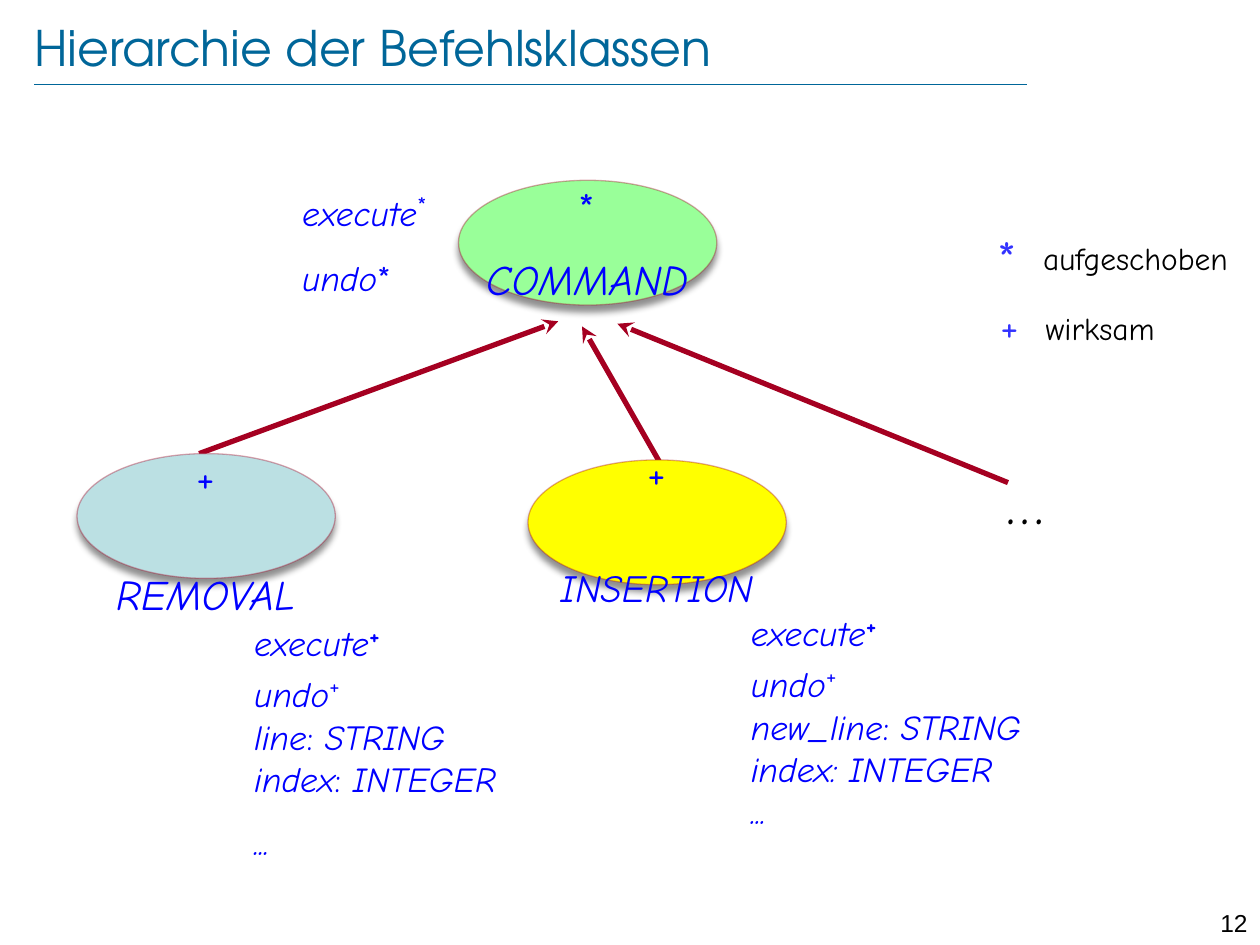
import lxml.etree
import pptx
import pptx.dml.color
import pptx.enum.shapes
import pptx.enum.text
import pptx.oxml.ns
import pptx.util

Pt = pptx.util.Pt
qn = pptx.oxml.ns.qn
ALIGN = pptx.enum.text.PP_ALIGN
BLUE = "0000FF"
DARK_RED = "A50021"
OUTLINE_ALPHA = 34
ITALIC = {"italic": True}
SUPERSCRIPT = {"size": 24, "baseline": 30}
BOLD_SUPERSCRIPT = {**SUPERSCRIPT, "bold": True}


def add_xml(parent, tag, **attributes):
    element = lxml.etree.SubElement(parent, qn(tag))
    for name, value in attributes.items():
        element.set(name, str(value))
    return element


def rgb(color):
    return pptx.dml.color.RGBColor.from_string(color)


def add_run(paragraph, text, size, font, color, italic=False, bold=False, baseline=0):
    """Add text in one format; each newline becomes a line break of the same size."""
    for index, line in enumerate(text.split("\n")):
        if index:
            paragraph.add_line_break()
            add_xml(paragraph._p[-1], "a:rPr", sz=size * 100)
        if not line:
            continue
        run = paragraph.add_run()
        run.text = line
        run.font.size = Pt(size)
        run.font.name = font
        run.font.color.rgb = rgb(color)
        run.font.italic = italic
        run.font.bold = bold
        if baseline:
            run._r.get_or_add_rPr().set("baseline", str(baseline * 1000))


def add_text(slide, box, paragraphs, size=20, font="Comic Neue", color=BLUE, align=ALIGN.LEFT,
             space_before=0, first_line_spacing=None, inset=None, middle=False):
    """Each paragraph is a string or a list of (text, format changes) runs."""
    shape = slide.shapes.add_textbox(*map(Pt, box))
    frame = shape.text_frame
    frame.word_wrap = True
    if inset is not None:
        frame.margin_left = frame.margin_right = Pt(inset)
        frame.margin_top = frame.margin_bottom = Pt(inset)
    if middle:
        frame.vertical_anchor = pptx.enum.text.MSO_ANCHOR.MIDDLE
    for index, runs in enumerate(paragraphs):
        paragraph = frame.add_paragraph() if index else frame.paragraphs[0]
        paragraph.alignment = align
        if index:
            paragraph.space_before = Pt(space_before)
        elif first_line_spacing:
            paragraph.line_spacing = first_line_spacing
        for text, changes in [(runs, {})] if isinstance(runs, str) else runs:
            add_run(paragraph, text, **{"size": size, "font": font, "color": color, **changes})


def add_line(slide, start, end, color, width, arrow=False):
    line = slide.shapes.add_connector(
        pptx.enum.shapes.MSO_CONNECTOR.STRAIGHT, *map(Pt, (*start, *end)))
    line.line.color.rgb = rgb(color)
    line.line.width = Pt(width)
    if arrow:
        add_xml(line.line._get_or_add_ln(), "a:tailEnd", type="stealth")
    add_xml(line._element.spPr, "a:effectLst")


def add_class_ellipse(slide, left, top, fill):
    ellipse = slide.shapes.add_shape(
        pptx.enum.shapes.MSO_SHAPE.OVAL, Pt(left), Pt(top), Pt(147.6), Pt(71.3))
    ellipse.fill.solid()
    ellipse.fill.fore_color.rgb = rgb(fill)
    ellipse.line.color.rgb = rgb(DARK_RED)
    ellipse.line.width = Pt(0.75)
    outline_color = ellipse.line._get_or_add_ln().find(".//" + qn("a:srgbClr"))
    add_xml(outline_color, "a:alpha", val=OUTLINE_ALPHA * 1000)
    ellipse.shadow.inherit = False
    effects = ellipse._element.spPr.find(qn("a:effectLst"))
    shadow = add_xml(effects, "a:outerShdw", blurRad=Pt(4), dist=Pt(4), dir=90 * 60000)
    shadow_color = add_xml(shadow, "a:srgbClr", val="000000")
    add_xml(shadow_color, "a:alpha", val=43000)


def add_class(slide, ellipse, label_top, label_height, marker, name, name_size=24, **text_format):
    left, top, fill = ellipse
    add_class_ellipse(slide, left, top, fill)
    add_text(slide, (left - 7.5, label_top, 162, label_height),
             [marker, [(name, {"italic": True, "size": name_size})]],
             size=24, align=ALIGN.CENTER, space_before=12, inset=3, **text_format)


def main():
    presentation = pptx.Presentation()
    presentation.slide_width, presentation.slide_height = Pt(720), Pt(540)
    slide = presentation.slides.add_slide(presentation.slide_layouts[6])

    add_line(slide, (19.5, 48), (587, 48), "006699", 0.25)
    add_text(slide, (680.4, 515.5, 39.6, 17.3), ["12"], size=14, font="Arial",
             color="000000", align=ALIGN.RIGHT)
    add_text(slide, (19.5, 9.4, 625.7, 34.6), ["Hierarchie der Befehlsklassen"], size=28,
             font="TeX Gyre Adventor", color="006699", inset=0, middle=True)

    for start, end in [((376.6, 263.5), (332.6, 186.5)),
                       ((113.8, 259.2), (319, 183.6)),
                       ((576, 275.8), (352.8, 185))]:
        add_line(slide, start, end, DARK_RED, 3, arrow=True)

    add_text(slide, (165.6, 102.2, 112.3, 67),
             [[("execute", ITALIC), ("*", SUPERSCRIPT)], [("undo", ITALIC), ("*", {})]],
             space_before=12)
    add_text(slide, (568, 264.2, 92.2, 45.4), ["…"], size=32, color="000000")

    execute = [("execute", ITALIC), ("+\n", BOLD_SUPERSCRIPT)]
    undo = [("undo", ITALIC), ("+", SUPERSCRIPT)]
    add_text(slide, (138.2, 347.8, 180, 139),
             [execute + undo + [("\nline", ITALIC), (":", {}), (" STRING\nindex", ITALIC),
                                (":", {}), (" INTEGER", ITALIC)],
              [("...", ITALIC)]], space_before=12)
    add_text(slide, (422, 342, 196.6, 128.2),
             [execute + undo,
              [("new_line", ITALIC), (":", {}), (" STRING\nindex: INTEGER", ITALIC)],
              [("...", ITALIC)]])

    for marker, marker_box, size, meaning, meaning_box in [
            ("+", (564.5, 167.8, 35.3, 36), 24, "wirksam", (590.4, 172.8, 98.6, 28.8)),
            ("*", (563, 126.7, 35.3, 41), 28, "aufgeschoben", (589, 133.2, 131, 28.8))]:
        add_text(slide, marker_box, [marker], size=size, color="3333FF")
        add_text(slide, meaning_box, [meaning], size=18, color="000000")

    add_class(slide, (262, 103, "99FF99"), 100.8, 49, "*", "COMMAND")
    add_class(slide, (44, 259.2, "BBE0E3"), 269.3, 43.2, "+\n", "REMOVAL",
              first_line_spacing=0.4)
    add_class(slide, (301.7, 262.8, "FFFF00"), 267, 41.8, "+\n", "INSERTION", name_size=22,
              first_line_spacing=0.4)

    presentation.save("out.pptx")


if __name__ == "__main__":
    main()
